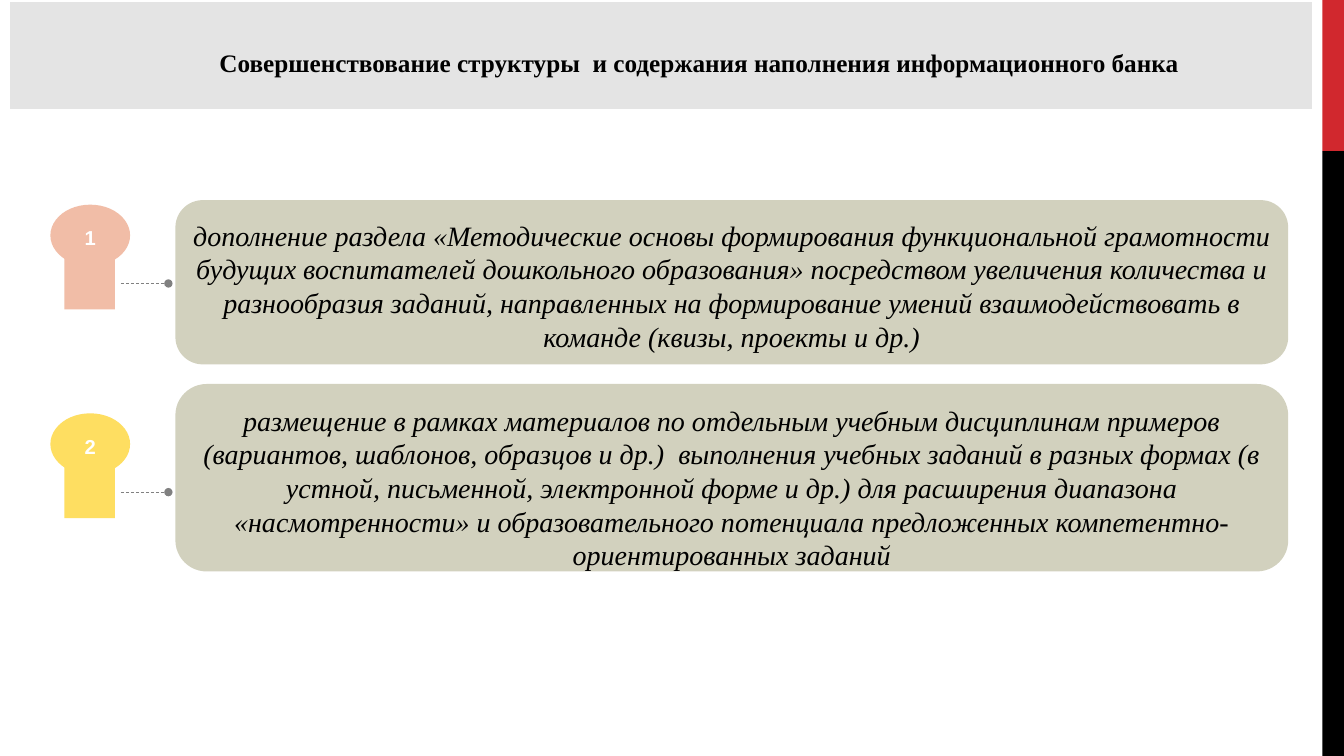
from dataclasses import dataclass

from lxml import etree
from pptx import Presentation
from pptx.dml.color import RGBColor
from pptx.enum.dml import MSO_LINE
from pptx.enum.shapes import MSO_CONNECTOR, MSO_SHAPE
from pptx.enum.text import MSO_ANCHOR, PP_ALIGN
from pptx.oxml.ns import qn
from pptx.shapes.autoshape import Shape
from pptx.slide import Slide
from pptx.util import Inches, Pt

RECT, OVAL, ROUNDED = MSO_SHAPE.RECTANGLE, MSO_SHAPE.OVAL, MSO_SHAPE.ROUNDED_RECTANGLE
STRAIGHT, DASH = MSO_CONNECTOR.STRAIGHT, MSO_LINE.DASH
CENTER, TOP, MIDDLE = PP_ALIGN.CENTER, MSO_ANCHOR.TOP, MSO_ANCHOR.MIDDLE

WIDTH, HEIGHT = Inches(13.33), Inches(7.5)
COLUMNS = ROWS = 100  # every length below counts columns or rows

COLORS = {
    "red": "D1282E",
    "black": "000000",
    "white": "FFFFFF",
    "band": "E4E4E4",
    "panel": "D2D1BE",
    "peach": "F1BDA7",
    "yellow": "FEDE61",
    "gray": "808080",
}


@dataclass(frozen=True)
class Box:
    left: float
    top: float
    width: float
    height: float


@dataclass(frozen=True)
class Direction:
    number: str
    color: str
    marker_top: float
    panel_top: float
    panel_height: float
    wording: str


DIRECTIONS = [
    Direction(
        "1", "peach", 27.07, 26.47, 21.73,
        "дополнение раздела «Методические основы формирования функциональной "
        "грамотности будущих воспитателей дошкольного образования» посредством "
        "увеличения количества и разнообразия заданий, направленных на "
        "формирование умений взаимодействовать в команде (квизы, проекты и др.)",
    ),
    Direction(
        "2", "yellow", 54.67, 50.8, 24.8,
        "размещение в рамках материалов по отдельным учебным дисциплинам примеров "
        "(вариантов, шаблонов, образцов и др.)  выполнения учебных заданий в разных "
        "формах (в устной, письменной, электронной форме и др.) для расширения "
        "диапазона «насмотренности» и образовательного потенциала предложенных "
        "компетентно-ориентированных заданий",
    ),
]


def rgb(color: str) -> RGBColor:
    return RGBColor.from_string(COLORS[color])


def across(columns: float) -> int:
    return round(WIDTH * columns / COLUMNS)


def down(rows: float) -> int:
    return round(HEIGHT * rows / ROWS)


def add_block(slide: Slide, kind: MSO_SHAPE, box: Box, color: str) -> Shape:
    block = slide.shapes.add_shape(
        kind, across(box.left), down(box.top), across(box.width), down(box.height)
    )
    block.shadow.inherit = False
    block.fill.solid()
    block.fill.fore_color.rgb = rgb(color)
    block.line.fill.background()
    return block


def write(block: Shape, wording: str, font_name: str, size: int, color: str,
          anchor: MSO_ANCHOR = MIDDLE, bold: bool = False, italic: bool = False,
          margins: tuple[float, float, float, float] = (0, 0, 0, 0)):
    """Fill the block with one centred paragraph; margins are left, top, right, bottom in inches."""
    frame = block.text_frame
    frame.word_wrap = True
    frame.vertical_anchor = anchor
    (frame.margin_left, frame.margin_top,
     frame.margin_right, frame.margin_bottom) = map(Inches, margins)
    paragraph = frame.paragraphs[0]
    paragraph.text = wording
    paragraph.alignment = CENTER
    font = paragraph.font
    font.name, font.size, font.bold, font.italic = font_name, Pt(size), bold, italic
    font.color.rgb = rgb(color)
    return paragraph


def add_heading(slide: Slide) -> None:
    band = add_block(slide, RECT, Box(0.6, 0, 97.2, 14.67), "band")
    band.line.color.rgb = rgb("white")
    band.line.width = Pt(3.25)
    heading = write(
        band, "Совершенствование структуры  и содержания наполнения информационного банка",
        "Times New Roman", 18, "black", bold=True, margins=(0.85, 0.05, 0.1, 0.05),
    )
    heading.line_spacing = Pt(32)


def add_leader(slide: Slide, row: float) -> None:
    """Draw the dashed line with a round end from a marker to its panel."""
    leader = slide.shapes.add_connector(
        STRAIGHT, across(9), down(row), across(12.53), down(row)
    )
    leader.line.color.rgb = rgb("gray")
    leader.line.width = Pt(0.5)
    leader.line.dash_style = DASH
    etree.SubElement(leader.line._get_or_add_ln(), qn("a:tailEnd"), type="oval")
    etree.SubElement(leader._element.spPr, qn("a:effectLst"))


def add_direction(slide: Slide, direction: Direction) -> None:
    top = direction.marker_top
    add_block(slide, RECT, Box(4.8, top + 1.2, 3.75, 12.67), direction.color)
    head = add_block(slide, OVAL, Box(3.75, top, 5.93, 8.13), direction.color)
    number = write(head, direction.number, "Arial", 18, "white", bold=True)
    number._p.get_or_add_pPr().find(qn("a:defRPr")).set("cap", "small")

    panel = add_block(
        slide, ROUNDED,
        Box(13.05, direction.panel_top, 82.8, direction.panel_height), "panel",
    )
    write(panel, direction.wording, "Times New Roman", 20, "black",
          anchor=TOP, italic=True, margins=(0.05, 0.1, 0.05, 0.1))
    add_leader(slide, top + 10.43)


def main() -> None:
    deck = Presentation()
    deck.slide_width, deck.slide_height = WIDTH, HEIGHT
    slide = deck.slides.add_slide(deck.slide_layouts[6])
    add_block(slide, RECT, Box(98.4, 0, 1.6, 20), "red")
    add_block(slide, RECT, Box(98.4, 20, 1.6, 80), "black")
    add_heading(slide)
    for direction in DIRECTIONS:
        add_direction(slide, direction)
    deck.save("out.pptx")


if __name__ == "__main__":
    main()
